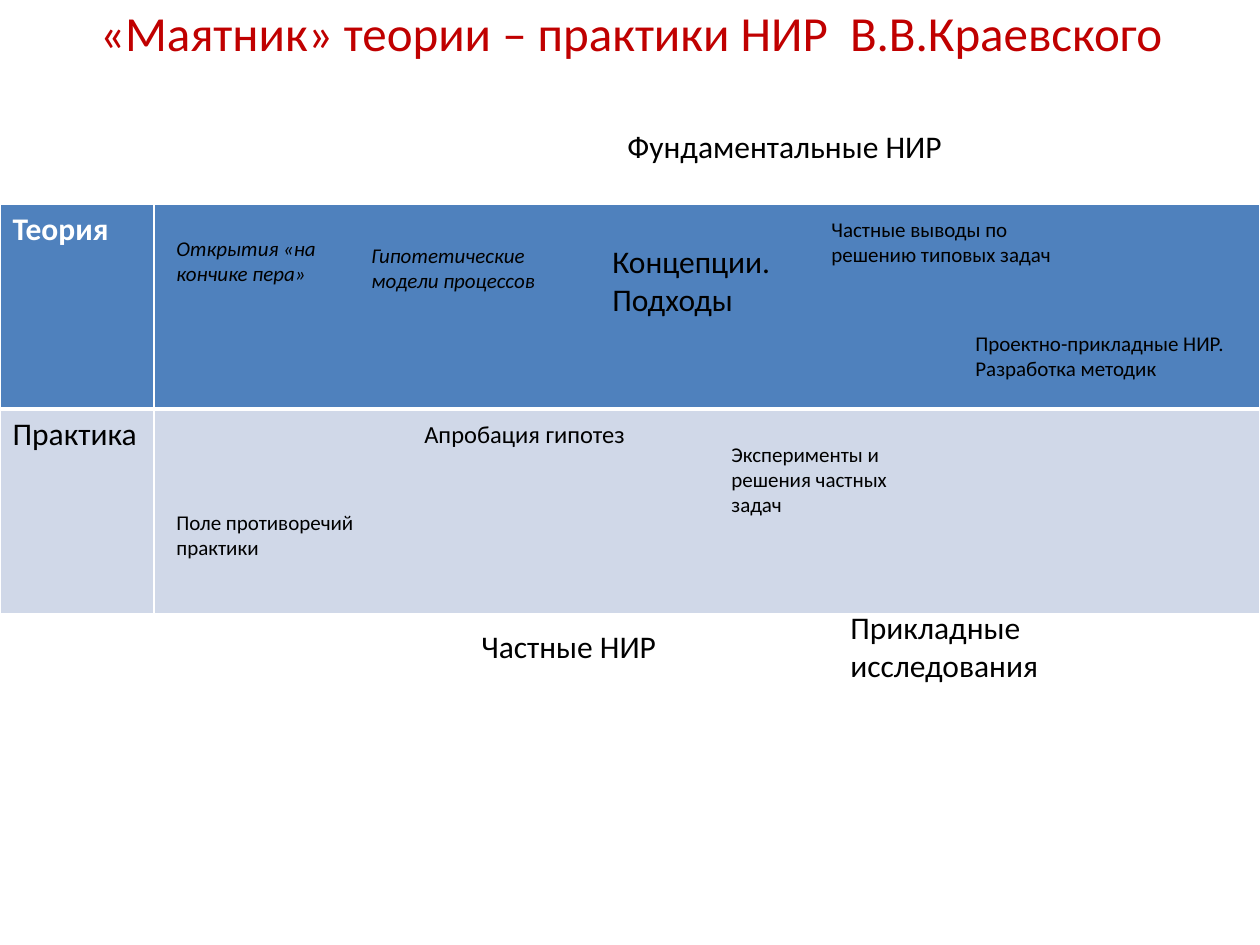
import pptx
import pptx.util
import pptx.dml.color
import pptx.enum.text
import lxml.etree
from pptx.oxml.ns import qn

RGB = pptx.dml.color.RGBColor
RED = RGB(0xC0, 0x00, 0x00)
BLACK = RGB(0x00, 0x00, 0x00)
WHITE = RGB(0xFF, 0xFF, 0xFF)
BLUE = RGB(0x4F, 0x81, 0xBD)
PALE = RGB(0xD0, 0xD8, 0xE8)
FONT = "Calibri"
ALIGN = pptx.enum.text.PP_ALIGN
ANCHOR = pptx.enum.text.MSO_ANCHOR


def px(n):
    return pptx.util.Emu(round(n * 914400 / 126))


def add_run(para, text, size, color=BLACK, bold=False, slant=False):
    run = para.add_run()
    run.text = text
    font = run.font
    font.name, font.size = FONT, pptx.util.Pt(size)
    font.bold, font.italic = bold, slant
    font.color.rgb = color


def add_text(slide, box, lines, size, color=BLACK, slant=False):
    frame = slide.shapes.add_textbox(*map(px, box)).text_frame
    frame.word_wrap = True
    for i, line in enumerate(lines):
        para = frame.add_paragraph() if i else frame.paragraphs[0]
        add_run(para, line, size, color, slant=slant)
    return frame


def add_title(slide, box):
    text = "«Маятник» теории – практики НИР  В.В.Краевского"
    frame = add_text(slide, box, [text], 28, RED)
    frame.vertical_anchor = ANCHOR.MIDDLE
    frame.paragraphs[0].alignment = ALIGN.CENTER


def set_edge(cell, side, width):
    props = cell._tc.get_or_add_tcPr()
    line = lxml.etree.SubElement(props, qn("a:" + side), w=str(pptx.util.Pt(width)))
    fill = lxml.etree.SubElement(line, qn("a:solidFill"))
    lxml.etree.SubElement(fill, qn("a:srgbClr"), val=str(WHITE))


def add_grid(slide, box):
    table = slide.shapes.add_table(2, 2, *map(px, box)).table
    head = 154
    table.columns[0].width = px(head)
    table.columns[1].width = px(box[2] - head)
    rows = [("Теория", BLUE, WHITE, True), ("Практика", PALE, BLACK, False)]
    for r, (name, fill, color, bold) in enumerate(rows):
        table.rows[r].height = px(box[3] / 2)
        for c in range(2):
            cell = table.cell(r, c)
            # Edges come before the fill in the cell properties
            for side in ("lnL", "lnR", "lnT", "lnB"):
                middle = side == ("lnT" if r else "lnB")
                set_edge(cell, side, 3 if middle else 1)
            cell.fill.solid()
            cell.fill.fore_color.rgb = fill
        add_run(table.cell(r, 0).text_frame.paragraphs[0], name, 18, color, bold)


def add_notes(slide, left, top, notes):
    for x, y, w, h, size, slant, *lines in notes:
        add_text(slide, (left + x, top + y, w, h), lines, size, slant=slant)


# Each note: x, y, width, height, size, italic, lines
ABOVE = [(615, 0, 348, 50, 18, False, "Фундаментальные НИР")]
THEORY = [
    (164, 25, 198, 63, 12, True, "Открытия «на кончике пера»"),
    (359, 32, 218, 63, 12, True, "Гипотетические модели процессов"),
    (600, 32, 189, 89, 18, False, "Концепции. Подходы"),
    (819, 6, 273, 63, 12, False, "Частные выводы по решению типовых задач"),
    (963, 120, 297, 63, 12, False, "Проектно-прикладные НИР.", "Разработка методик"),
]
PRACTICE = [
    (164, 94, 248, 63, 12, False, "Поле противоречий практики"),
    (412, 4, 228, 43, 14, False, "Апробация гипотез"),
    (719, 26, 218, 89, 12, False, "Эксперименты и решения частных задач"),
]
BELOW = [
    (469, 19, 241, 50, 18, False, "Частные НИР"),
    (838, 0, 307, 89, 18, False, "Прикладные исследования"),
]


def main():
    deck = pptx.Presentation()
    deck.slide_width, deck.slide_height = px(1260), px(945)
    slide = deck.slides.add_slide(deck.slide_layouts[6])
    add_title(slide, (64, 3, 1134, 58))
    add_grid(slide, (0, 204, 1260, 410))
    # Notes above, inside and below the two rows
    for top, notes in ((121, ABOVE), (204, THEORY), (409, PRACTICE), (602, BELOW)):
        add_notes(slide, 0, top, notes)
    deck.save("out.pptx")


if __name__ == "__main__":
    main()
